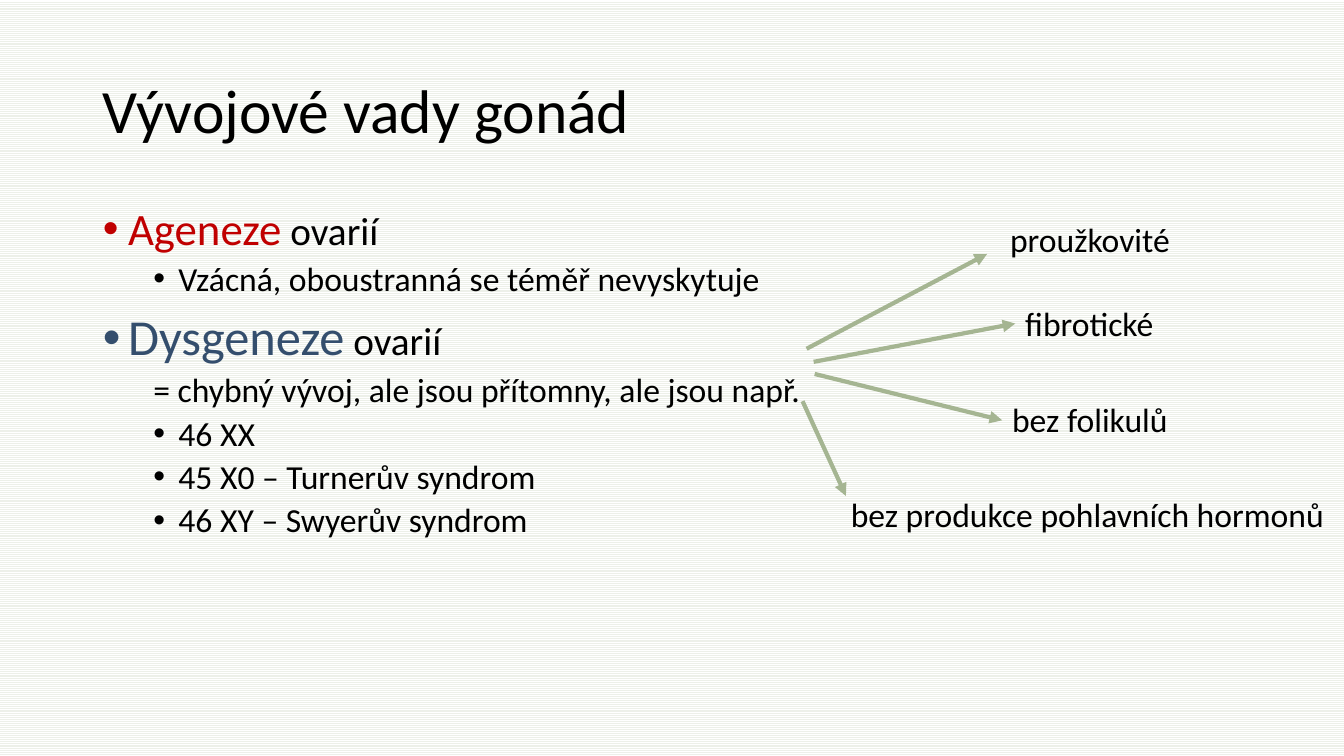
import pptx
import pptx.dml.color
import pptx.enum.dml
import pptx.enum.shapes
import pptx.enum.text
import pptx.oxml
import pptx.oxml.ns
import pptx.util
from pptx.util import Inches

FONT = "Calibri"
COLORS = {
    "text": "000000",
    "agenesis": "C00000",
    "dysgenesis": "344E6D",
    "arrow": "A5B592",
    "stripe": "EDF0E9",
    "paper": "FFFFFF",
}

# Level, bulleted, then spans of (text, size, colour)
OUTLINE = [
    (0, True, [("Ageneze", 32, "agenesis"), (" ovarií", 28, "text")]),
    (1, True, [("Vzácná, oboustranná se téměř nevyskytuje", 24, "text")]),
    (0, True, [("Dysgeneze", 36, "dysgenesis"), (" ovarií", 28, "text")]),
    (1, False, [("= chybný vývoj, ale jsou přítomny, ale jsou např.", 24, "text")]),
    (1, True, [("46 XX", 24, "text")]),
    (1, True, [("45 X0 – Turnerův syndrom", 24, "text")]),
    (1, True, [("46 XY – Swyerův syndrom", 24, "text")]),
]

# Label, its left, top and width, then the arrow's start and end
FEATURES = [
    ("proužkovité", (9.92, 2.12, 1.8), (8, 3.46), (9.79, 2.52)),
    ("fibrotické", (10.07, 2.96, 1.49), (8.07, 3.59), (10.07, 3.21)),
    ("bez folikulů", (9.94, 3.91, 1.76), (8.08, 3.71), (9.94, 4.17)),
    ("bez produkce pohlavních hormonů", (8.34, 4.85, 4.94), (7.96, 3.98), (8.39, 4.92)),
]


def color(name):
    return pptx.dml.color.RGBColor.from_string(COLORS[name])


def set_font(font, size, color_name="text"):
    font.name = FONT
    font.size = pptx.util.Pt(size)
    font.color.rgb = color(color_name)


def place(shape, left, top, width, height):
    shape.left, shape.top = Inches(left), Inches(top)
    shape.width, shape.height = Inches(width), Inches(height)


def add_element(parent, tag, **attributes):
    element = pptx.oxml.parse_xml(f"<{tag} {pptx.oxml.ns.nsdecls('a')}/>")
    for name, value in attributes.items():
        element.set(name, value)
    parent.append(element)


def set_bullet(para, level, bulleted):
    """Set the hanging indent and the bullet, or switch the bullet off."""
    hanging = Inches(0.25) if bulleted else 0
    properties = para._p.get_or_add_pPr()
    properties.set("marL", str(Inches(0.5 * level) + hanging))
    properties.set("indent", str(-hanging))
    if bulleted:
        add_element(properties, "a:buFont", typeface="Arial")
        add_element(properties, "a:buChar", char="•")
    else:
        add_element(properties, "a:buNone")


def fill_background(page):
    fill = page.background.fill
    fill.patterned()
    fill.pattern = pptx.enum.dml.MSO_PATTERN.LIGHT_HORIZONTAL
    fill.fore_color.rgb = color("stripe")
    fill.back_color.rgb = color("paper")


def fill_title(title, text):
    place(title, 0.92, 0.4, 11.5, 1.45)
    frame = title.text_frame
    frame.text = text
    frame.vertical_anchor = pptx.enum.text.MSO_ANCHOR.MIDDLE
    frame.auto_size = pptx.enum.text.MSO_AUTO_SIZE.NONE
    para = frame.paragraphs[0]
    para.alignment = pptx.enum.text.PP_ALIGN.LEFT
    para.line_spacing = 0.9
    set_font(para.font, 44)


def fill_outline(body):
    place(body, 0.92, 2, 7.22, 4.76)
    frame = body.text_frame
    frame.auto_size = pptx.enum.text.MSO_AUTO_SIZE.NONE
    for index, (level, bulleted, spans) in enumerate(OUTLINE):
        para = frame.add_paragraph() if index else frame.paragraphs[0]
        para.level = level
        set_bullet(para, level, bulleted)
        para.line_spacing = 0.9
        para.space_before = pptx.util.Pt((5 if level else 10) if index else 0)
        for text, size, color_name in spans:
            span = para.add_run()
            span.text = text
            set_font(span.font, size, color_name)


def add_label(page, text, left, top, width):
    box = page.shapes.add_textbox(Inches(left), Inches(top), Inches(width), Inches(0.5))
    frame = box.text_frame
    frame.text = text
    frame.word_wrap = False
    frame.auto_size = pptx.enum.text.MSO_AUTO_SIZE.SHAPE_TO_FIT_TEXT
    set_font(frame.paragraphs[0].font, 24)


def add_arrow(page, start, end):
    arrow = page.shapes.add_connector(
        pptx.enum.shapes.MSO_CONNECTOR.STRAIGHT, *map(Inches, start + end)
    )
    arrow.line.color.rgb = color("arrow")
    arrow.line.width = pptx.util.Pt(3)
    add_element(arrow.line._get_or_add_ln(), "a:tailEnd", type="triangle")
    add_element(arrow._element.spPr, "a:effectLst")


def main():
    deck = pptx.Presentation()
    deck.slide_width, deck.slide_height = Inches(13.33), Inches(7.5)
    page = deck.slides.add_slide(deck.slide_layouts.get_by_name("Title and Content"))
    fill_background(page)
    fill_title(page.shapes.title, "Vývojové vady gonád")
    fill_outline(page.placeholders[1])
    for text, position, start, end in FEATURES:
        add_label(page, text, *position)
        add_arrow(page, start, end)
    deck.save("out.pptx")


if __name__ == "__main__":
    main()
